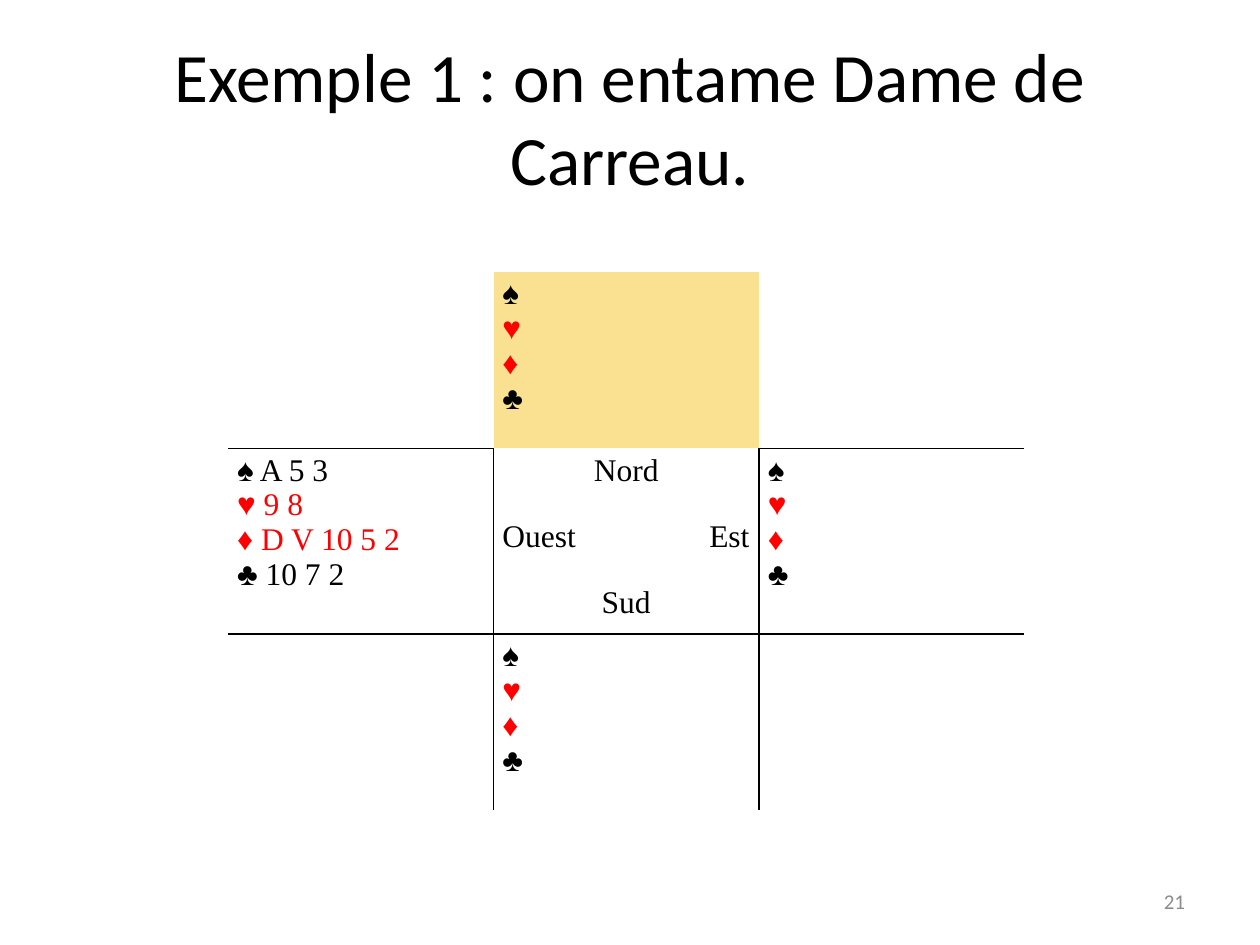
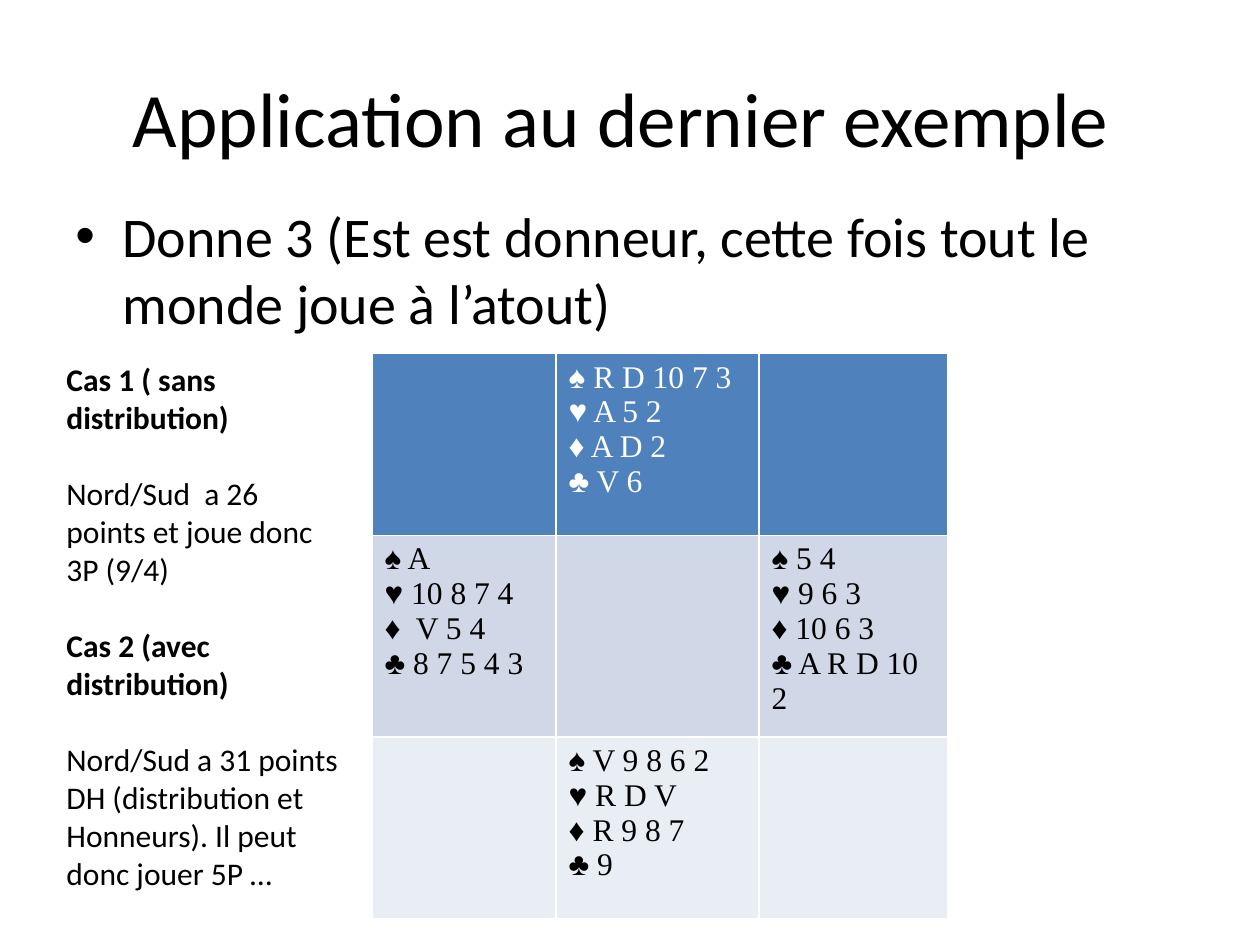
import pptx
import pptx.util
import pptx.dml.color
import pptx.enum.text
import pptx.oxml
import pptx.oxml.ns

Cm, Pt = pptx.util.Cm, pptx.util.Pt
hue = pptx.dml.color.RGBColor.from_string
ALIGN = pptx.enum.text.PP_ALIGN
MIDDLE = pptx.enum.text.MSO_ANCHOR.MIDDLE
NS = pptx.oxml.ns.nsdecls("a")

BLACK, WHITE, RED, GREY = "000000", "FFFFFF", "FF0000", "8C8C8C"
SANS, SERIF = "Calibri", "Times New Roman"
TITLE = (1.27, 0.76, 22.86, 3.18)
SUITS = ["♠", "♥", "♦", "♣"]


def write(frame, lines, size, color=BLACK, name=SANS, align=ALIGN.LEFT):
    """Put one paragraph per line into frame and return the paragraphs."""
    frame.word_wrap = True
    frame.text = "\n".join(lines)
    for para in frame.paragraphs:
        para.alignment = align
        para.font.size = Pt(size)
        para.font.name = name
        para.font.bold = False
        para.font.color.rgb = hue(color)
    return frame.paragraphs


def grid(slide, left, top, cols, row):
    """Add a plain table of three equal rows."""
    shape = slide.shapes.add_table(3, len(cols), Cm(left), Cm(top), Cm(sum(cols)), Cm(3 * row))
    table = shape.table
    table.first_row = table.horz_banding = False
    for col, width in zip(table.columns, cols):
        col.width = Cm(width)
    for line in table.rows:
        line.height = Cm(row)
    return table


deck = pptx.Presentation()
deck.slide_width, deck.slide_height = Cm(25.4), Cm(19.05)
blank = deck.slide_layouts[6]

# Titles
slides = []
for title, size in [("Exemple 1 : on entame Dame de Carreau.", 39.6),
                    ("Application au dernier exemple ", 44)]:
    slide = deck.slides.add_slide(blank)
    frame = slide.shapes.add_textbox(*map(Cm, TITLE)).text_frame
    frame.vertical_anchor = MIDDLE
    write(frame, [title], size, align=ALIGN.CENTER)
    slides.append(slide)
lead, last = slides

# Slide 1: the deal with only West's hand shown
hands = {
    (0, 1): SUITS,
    (1, 0): ["♠ A 5 3", "♥ 9 8", "♦ D V 10 5 2", "♣ 10 7 2"],
    (1, 2): SUITS,
    (2, 1): SUITS,
}
table = grid(lead, 4.6, 5.48, [5.35] * 3, 3.56)
for r in range(3):
    for c in range(3):
        cell = table.cell(r, c)
        cell.margin_left = cell.margin_right = Cm(0.18)
        cell.margin_top = cell.margin_bottom = Cm(0.09)
        edges = {
            "L": r > 0 and c > 0,
            "R": r > 0 and c < 2,
            "T": r > 0 and (r, c) != (1, 1),
            "B": r < 2 and (r, c) != (0, 1),
        }
        for side, drawn in edges.items():
            paint = (f'<a:solidFill><a:srgbClr val="{BLACK}"/></a:solidFill>'
                     if drawn else "<a:noFill/>")
            cell._tc.get_or_add_tcPr().append(pptx.oxml.parse_xml(
                f'<a:ln{side} {NS} w="12700">{paint}</a:ln{side}>'))
        if (r, c) == (0, 1):
            cell.fill.solid()
            cell.fill.fore_color.rgb = hue("F9E191")
        else:
            cell.fill.background()
        if (r, c) in hands:
            paras = write(cell.text_frame, hands[r, c], 18, name=SERIF)
            for para in paras[1:3]:
                para.font.color.rgb = hue(RED)

seats = write(table.cell(1, 1).text_frame, ["Nord", "Ouest\tEst", "Sud"], 18,
              name=SERIF, align=ALIGN.CENTER)
seats[1].alignment = ALIGN.LEFT
seats[1].space_before = seats[1].space_after = Pt(18)
stop = pptx.oxml.parse_xml(
    f'<a:tabLst {NS}><a:tab pos="{Cm(4.98)}" algn="r"/></a:tabLst>')
seats[1]._p.get_or_add_pPr().insert_element_before(stop, "a:defRPr", "a:extLst")

frame = lead.shapes.add_textbox(Cm(18.21), Cm(17.65), Cm(5.93), Cm(1.02)).text_frame
frame.vertical_anchor = MIDDLE
write(frame, ["21"], 12, GREY, align=ALIGN.RIGHT)

# Slide 2: bullet, full deal and the two cases
frame = last.shapes.add_textbox(Cm(1.27), Cm(3.94), Cm(22.86), Cm(13.79)).text_frame
point = write(frame, ["Donne 3 (Est est donneur, cette fois tout le monde joue à l’atout)"], 32)[0]
props = point._p.get_or_add_pPr()
props.set("marL", str(Cm(0.95)))
props.set("indent", str(-Cm(0.95)))
for tag in ['buFont typeface="Arial"', 'buChar char="•"']:
    props.insert_element_before(pptx.oxml.parse_xml(f"<a:{tag} {NS}/>"), "a:defRPr", "a:extLst")

hands = {
    (0, 1): ["♠ R D 10 7 3", "♥ A 5 2", "♦ A D 2", "♣ V 6"],
    (1, 0): ["♠ A", "♥ 10 8 7 4", "♦  V 5 4", "♣ 8 7 5 4 3"],
    (1, 2): ["♠ 5 4", "♥ 9 6 3", "♦ 10 6 3", "♣ A R D 10 2"],
    (2, 1): ["♠ V 9 8 6 2", "♥ R D V", "♦ R 9 8 7", "♣ 9"],
}
table = grid(last, 7.5, 7.13, [3.71, 4.09, 3.81], 3.66)
for r, (fill, ink) in enumerate([("4F81BD", WHITE), ("D0D8E8", BLACK), ("E9EDF4", BLACK)]):
    for c in range(3):
        cell = table.cell(r, c)
        cell.fill.solid()
        cell.fill.fore_color.rgb = hue(fill)
        if (r, c) in hands:
            write(cell.text_frame, hands[r, c], 18, ink, SERIF)

cases = [
    "Cas 1 ( sans distribution)",
    "Nord/Sud  a 26 points et joue donc  3P (9/4)",
    "Cas 2 (avec distribution)",
    "Nord/Sud a 31 points DH (distribution et Honneurs). Il peut donc jouer 5P …",
]
frame = last.shapes.add_textbox(Cm(1.09), Cm(7.14), Cm(6), Cm(11.02)).text_frame
for i, para in enumerate(write(frame, cases, 18)):
    para.font.bold = i % 2 == 0
    para.space_before = Pt(22 if i else 0)

deck.save("out.pptx")
